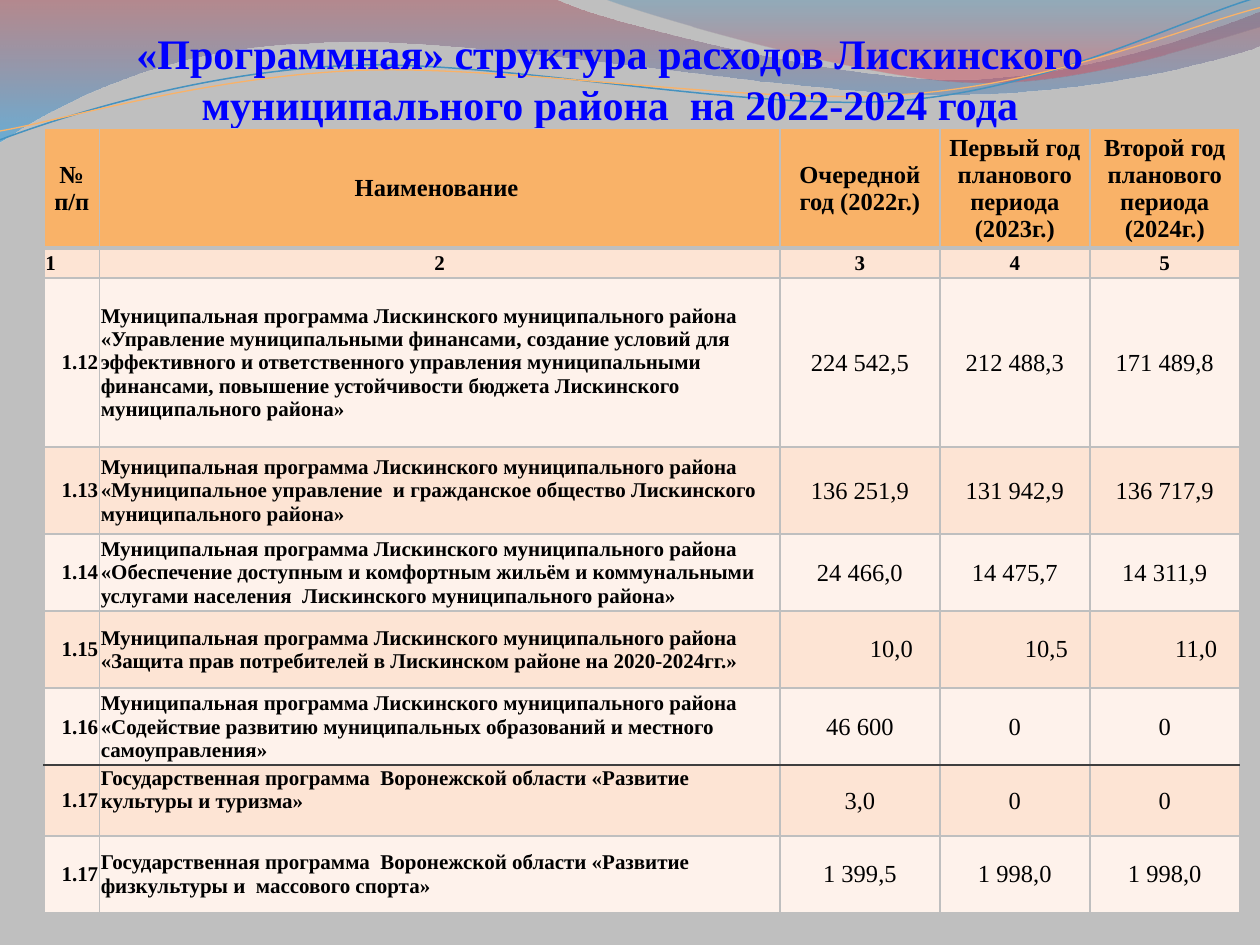
import lxml.etree
import pptx
import pptx.dml.color
import pptx.enum.text
import pptx.oxml
import pptx.oxml.ns
import pptx.util
from pptx.oxml.ns import qn
from pptx.util import Inches

FONT = "Times New Roman"
COLORS = {
    "background": "BFBFBF", "title": "0000FF", "text": "000000",
    "header": "F9B268", "band_dark": "FDE4D4", "band_light": "FEF2EB",
    "border": "BFBFBF", "divider": "3F3F3F",
    "red": "A84752", "sky": "249FE6", "steel": "2A7EAF", "rose": "D24B5A",
    "blue_line": "4592BF", "orange_line": "F9B268",
}
ALIGN = pptx.enum.text.PP_ALIGN
ANCHOR = pptx.enum.text.MSO_ANCHOR

TITLE = "«Программная» структура расходов Лискинского муниципального района  на 2022-2024 года"
MUNICIPAL = "Муниципальная программа Лискинского муниципального района "
REGIONAL = "Государственная программа  Воронежской области "
ROWS = [
    ("№ п/п", "Наименование ", "Очередной год (2022г.)",
     "Первый год планового периода (2023г.)", "Второй год планового периода (2024г.)"),
    ("1", "2", "3", "4", "5"),
    ("1.12", MUNICIPAL + "«Управление муниципальными финансами, создание условий для "
     "эффективного и ответственного управления муниципальными финансами, повышение "
     "устойчивости бюджета Лискинского муниципального района»",
     "224 542,5", "212 488,3", "171 489,8"),
    ("1.13", MUNICIPAL + "«Муниципальное управление  и гражданское общество Лискинского "
     "муниципального района»", "136 251,9", "131 942,9", "136 717,9"),
    ("1.14", MUNICIPAL + "«Обеспечение доступным и комфортным жильём и коммунальными "
     "услугами населения  Лискинского муниципального района»",
     "24 466,0", "14 475,7", "14 311,9"),
    ("1.15", MUNICIPAL + "«Защита прав потребителей в Лискинском районе на 2020-2024гг.»",
     "10,0", "10,5", "11,0"),
    ("1.16", MUNICIPAL + "«Содействие развитию муниципальных образований и местного "
     "самоуправления»", "46 600", "0", "0"),
    ("1.17", REGIONAL + "«Развитие культуры и туризма»", "3,0", "0", "0"),
    ("1.17", REGIONAL + "«Развитие физкультуры и  массового спорта»",
     "1 399,5", "1 998,0", "1 998,0"),
]
COLUMN_WIDTHS = [0.44, 5.4, 1.27, 1.19, 1.19]
ROW_HEIGHTS = [0.89, 0.24, 1.34, 0.69, 0.61, 0.61, 0.56, 0.56, 0.61]
INDENTED_ROW, DIVIDER_ROW, RAISED_ROW = 5, 6, 7

# Pairs are straight steps, sextets are Bezier curves; stops are position, colour, opacity.
WAVE_BANDS = [
    ([(0, 0), (4.4, -0.01), (4.76, 0.17, 6.64, 0.63, 7.58, 0.63),
      (8.53, 0.63, 9.58, 0.26, 10, 0.09), (10.01, 0.36),
      (9.83, 0.44, 8.7, 0.76, 7.46, 0.75), (6.22, 0.75, 3.82, 0.28, 2.57, 0.34),
      (1.29, 0.36, 0.46, 0.83, -0.01, 1.13), (0, 0)],
     [(0, "red", 45), (1, "sky", 55)]),
    ([(4.79, -0.01), (5.09, 0.11, 6.82, 0.62, 7.69, 0.65),
      (8.56, 0.69, 9.61, 0.32, 10, 0.21), (10, 0), (4.79, -0.01)],
     [(0, "steel", 30), (0.8, "rose", 45)]),
]
WAVE_LINES = [
    ([(0, 1.11), (0.48, 0.93, 1.58, 0.57, 2.77, 0.52),
      (3.95, 0.47, 5.93, 0.89, 7.13, 0.8), (8.33, 0.71, 9.38, 0.15, 9.98, -0.02)],
     "blue_line", 0.85),
    ([(0, 1.04), (0.47, 0.96, 1.64, 0.61, 2.83, 0.56),
      (4.03, 0.51, 5.97, 0.84, 7.17, 0.75), (8.36, 0.67, 9.41, 0.21, 10, 0.06)],
     "orange_line", 0.75),
]


def color(name):
    return pptx.dml.color.RGBColor.from_string(COLORS[name])


def add_outline(slide, segments, close):
    """Build a freeform through all points, then join each Bezier triple into a curve."""
    points = [(Inches(segment[i]), Inches(segment[i + 1]))
              for segment in segments for i in range(0, len(segment), 2)]
    builder = slide.shapes.build_freeform(*points[0], scale=1.0)
    builder.add_line_segments(points[1:], close=close)
    shape = builder.convert_to_shape()
    shape.shadow.inherit = False
    steps = iter(shape._element.findall(".//" + qn("a:lnTo")))
    for segment in segments[1:]:
        step = next(steps)
        if len(segment) == 6:
            curve = step.makeelement(qn("a:cubicBezTo"))
            step.addprevious(curve)
            for part in (step, next(steps), next(steps)):
                curve.append(part[0])
                part.getparent().remove(part)
    return shape


def add_wave_band(slide, segments, stops):
    shape = add_outline(slide, segments, close=True)
    shape.line.fill.background()
    shape.fill.gradient()
    shape.fill.gradient_angle = 270
    for stop, (position, name, _) in zip(shape.fill.gradient_stops, stops):
        stop.position = position
        stop.color.rgb = color(name)
    tints = shape._element.spPr.findall(".//" + qn("a:srgbClr"))
    for tint, (_, _, opacity) in zip(tints, stops):
        lxml.etree.SubElement(tint, qn("a:alpha"), val=str(opacity * 1000))


def add_wave_line(slide, segments, name, width):
    shape = add_outline(slide, segments, close=False)
    shape.fill.background()
    shape.line.color.rgb = color(name)
    shape.line.width = pptx.util.Pt(width)


def add_run(paragraph, text, size, bold, name):
    run = paragraph.add_run()
    run.text = text
    run.font.name = FONT
    run.font.size = pptx.util.Pt(size)
    run.font.bold = bold
    run.font.color.rgb = color(name)
    lxml.etree.SubElement(paragraph._p, qn("a:endParaRPr"), sz=str(size * 100))


def add_title(slide):
    box = slide.shapes.add_textbox(Inches(0.23), Inches(0.24), Inches(9.22), Inches(0.78))
    frame = box.text_frame
    frame.word_wrap = True
    frame.vertical_anchor = ANCHOR.BOTTOM
    frame.margin_left = frame.margin_right = frame.margin_bottom = 0
    frame.margin_top = Inches(0.05)
    frame.paragraphs[0].alignment = ALIGN.CENTER
    add_run(frame.paragraphs[0], TITLE, 24, True, "title")


def set_borders(cell, row):
    borders = {side: ("border", 1) for side in "LRTB"}
    if row == 0:
        borders["B"] = ("border", 3)
    elif row == DIVIDER_ROW:
        borders["B"] = ("divider", 1)
    elif row == DIVIDER_ROW + 1:
        borders["T"] = ("divider", 1)
    elif row == 1:
        borders["T"] = ("border", 3)
    properties = cell._tc.get_or_add_tcPr()
    for side, (name, width) in borders.items():
        properties.append(pptx.oxml.parse_xml(
            f'<a:ln{side} {pptx.oxml.ns.nsdecls("a")} w="{pptx.util.Pt(width)}"><a:solidFill>'
            f'<a:srgbClr val="{COLORS[name]}"/></a:solidFill></a:ln{side}>'))


def fill_cell(cell, row, column, text):
    set_borders(cell, row)
    cell.fill.solid()
    cell.fill.fore_color.rgb = color(
        "header" if row == 0 else "band_dark" if row % 2 else "band_light")
    cell.margin_left = cell.margin_top = cell.margin_right = Inches(0.01)
    cell.margin_bottom = pptx.util.Pt(0.25)
    cell.vertical_anchor = ANCHOR.MIDDLE

    paragraph = cell.text_frame.paragraphs[0]
    is_value = row > 1 and column > 1
    paragraph.alignment = ALIGN.CENTER
    if row > 1 and column < 2:
        paragraph.alignment = (ALIGN.RIGHT, ALIGN.LEFT)[column]
    elif row == 1 and column == 0:
        paragraph.alignment = ALIGN.LEFT
    if is_value and row == INDENTED_ROW:
        cell.vertical_anchor = ANCHOR.BOTTOM
        cell.margin_bottom = Inches(0.2)
        paragraph.level = 1
        paragraph._p.get_or_add_pPr().set("marL", str(Inches(0.5)))
    elif row == RAISED_ROW and column == 1:
        cell.vertical_anchor = ANCHOR.TOP
    add_run(paragraph, text, 14 if row == 0 or is_value else 12, not is_value, "text")


def add_program_table(slide):
    table = slide.shapes.add_table(
        len(ROWS), len(COLUMN_WIDTHS), Inches(0.35), Inches(1.02),
        Inches(sum(COLUMN_WIDTHS)), Inches(sum(ROW_HEIGHTS))).table
    table.first_row = table.horz_banding = False
    for column, width in zip(table.columns, COLUMN_WIDTHS):
        column.width = Inches(width)
    for row, height in zip(table.rows, ROW_HEIGHTS):
        row.height = Inches(height)
    for row, texts in enumerate(ROWS):
        for column, text in enumerate(texts):
            fill_cell(table.cell(row, column), row, column, text)


def main():
    presentation = pptx.Presentation()
    presentation.slide_width, presentation.slide_height = Inches(10), Inches(7.5)
    slide = presentation.slides.add_slide(presentation.slide_layouts[6])
    slide.background.fill.solid()
    slide.background.fill.fore_color.rgb = color("background")
    for band in WAVE_BANDS:
        add_wave_band(slide, *band)
    for line in WAVE_LINES:
        add_wave_line(slide, *line)
    add_title(slide)
    add_program_table(slide)
    presentation.save("out.pptx")


if __name__ == "__main__":
    main()
